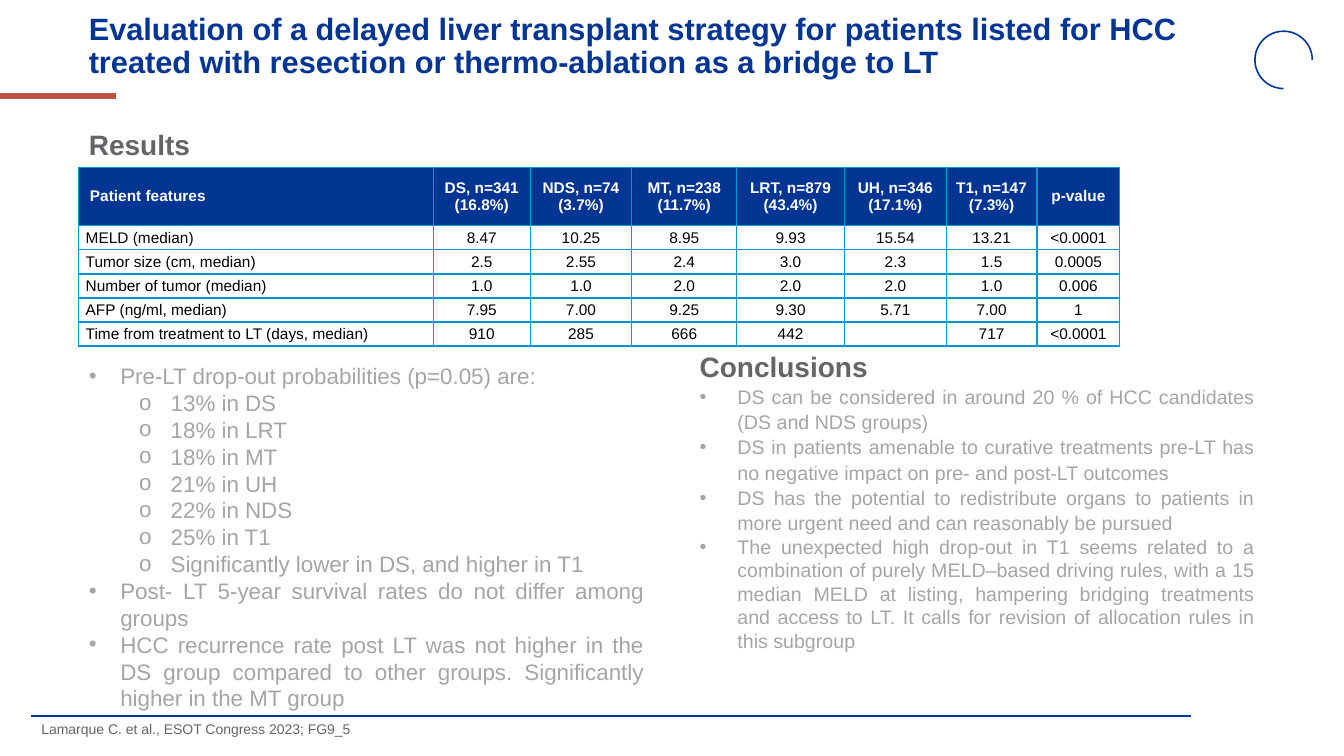
import pptx
import pptx.util
import pptx.dml.color
import pptx.enum.shapes
import pptx.enum.text
import pptx.oxml.ns
import lxml.etree

Pt = pptx.util.Pt
ALIGN = pptx.enum.text.PP_ALIGN
ANCHOR = pptx.enum.text.MSO_ANCHOR
LINE = pptx.enum.shapes.MSO_CONNECTOR.STRAIGHT
NAVY, GREY, PALE = "003594", "636569", "A5A5A5"
RED, CYAN, WHITE, BLACK = "BC5441", "0097CE", "FFFFFF", "000000"

TITLE = ("Evaluation of a delayed liver transplant strategy for patients listed for HCC "
         "treated with resection or thermo-ablation as a bridge to LT")
CITATION = "Lamarque C. et al., ESOT Congress 2023; FG9_5"
COLUMN_WIDTHS = [253.4, 69.1, 72.7, 74.9, 77, 72.7, 64.8, 59.2]
PATIENT_ROWS = [
    [" Patient features", "DS, n=341\n(16.8%)", "NDS, n=74\n(3.7%)", "MT, n=238\n(11.7%)",
     "LRT, n=879\n(43.4%)", "UH, n=346\n(17.1%)", "T1, n=147\n(7.3%)", "p-value"],
    ["MELD (median)", "8.47", "10.25", "8.95", "9.93", "15.54", "13.21", "<0.0001"],
    ["Tumor size (cm, median)", "2.5", "2.55", "2.4", "3.0", "2.3", "1.5", "0.0005"],
    ["Number of tumor (median)", "1.0", "1.0", "2.0", "2.0", "2.0", "1.0", "0.006"],
    ["AFP (ng/ml, median)", "7.95", "7.00", "9.25", "9.30", "5.71", "7.00", "1"],
    ["Time from treatment to LT (days, median)", "910", "285", "666", "442", "", "717",
     "<0.0001"],
]
RESULTS = [
    (0, "Pre-LT drop-out probabilities (p=0.05) are:"),
    (1, "13% in DS"),
    (1, "18% in LRT"),
    (1, "18% in MT"),
    (1, "21% in UH"),
    (1, "22% in NDS"),
    (1, "25% in T1"),
    (1, "Significantly lower in DS, and higher in T1"),
    (0, "Post- LT 5-year survival rates do not differ among groups"),
    (0, "HCC recurrence rate post LT was not higher in the DS group compared to other groups. "
        "Significantly higher in the MT group"),
]
CONCLUSIONS = [
    "DS can be considered in around 20 % of HCC candidates (DS and NDS groups)",
    "DS in patients amenable to curative treatments pre-LT has no negative impact on pre- "
    "and post-LT outcomes",
    "DS has the potential to redistribute organs to patients in more urgent need and can "
    "reasonably be pursued",
    "The unexpected high drop-out in T1 seems related to a combination of purely MELD–based "
    "driving rules, with a 15 median MELD at listing, hampering bridging treatments and "
    "access to LT. It calls for revision of allocation rules in this subgroup",
]


def color(value):
    return pptx.dml.color.RGBColor.from_string(value)


def add_child(parent, tag, **attributes):
    child = lxml.etree.SubElement(parent, pptx.oxml.ns.qn(tag))
    for name, value in attributes.items():
        child.set(name, value)
    return child


def place(shape, box, anchor=ANCHOR.TOP):
    shape.left, shape.top, shape.width, shape.height = [Pt(length) for length in box]
    frame = shape.text_frame
    frame.word_wrap = True
    frame.auto_size = pptx.enum.text.MSO_AUTO_SIZE.NONE
    frame.vertical_anchor = anchor
    frame.margin_left = frame.margin_right = Pt(7.2)
    frame.margin_top = frame.margin_bottom = Pt(3.6)
    return frame


def next_para(frame):
    first = frame.paragraphs[0]
    return frame.add_paragraph() if first.runs else first


def write(para, text, size, ink, bold=False, align=ALIGN.LEFT, pitch=None):
    para.alignment = align
    para.space_before = Pt(0)
    if pitch:
        para.line_spacing = Pt(pitch)
    span = para.add_run()
    span.text = text
    span.font.name = "Arial"
    span.font.size = Pt(size)
    span.font.bold = bold
    span.font.color.rgb = color(ink)


def set_bullet(para, symbol, margin, hang):
    properties = para._p.get_or_add_pPr()
    properties.set("marL", str(Pt(margin)))
    properties.set("indent", str(Pt(-hang)))
    if symbol:
        add_child(properties, "a:buFont", typeface="Arial")
        add_child(properties, "a:buChar", char=symbol)
    else:
        add_child(properties, "a:buNone")


def add_heading(frame, text):
    para = next_para(frame)
    set_bullet(para, None, 0, 0)
    write(para, text, 20, GREY, bold=True, pitch=24)


def add_rule(page, left, top, width, ink, weight):
    rule = page.shapes.add_connector(LINE, Pt(left), Pt(top), Pt(left + width), Pt(top))
    rule.line.color.rgb = color(ink)
    rule.line.width = Pt(weight)
    add_child(rule._element.spPr, "a:effectLst")


def add_decor(page):
    add_rule(page, 0, 68.4, 82.8, RED, 4.5)
    add_rule(page, 22.3, 511.2, 828.7, NAVY, 1.5)
    # Three-quarter ring, open at the lower right
    ring = page.shapes.add_shape(pptx.enum.shapes.MSO_SHAPE.ARC,
                                 Pt(896.4), Pt(22.3), Pt(41), Pt(41))
    ring.adjustments[0], ring.adjustments[1] = 54, 0
    ring.shadow.inherit = False
    ring.fill.background()
    ring.line.color.rgb = color(NAVY)
    ring.line.width = Pt(1.13)


def add_results_list(holder, box):
    frame = place(holder, box)
    for level, text in RESULTS:
        para = next_para(frame)
        para.level = level
        set_bullet(para, "•o"[level], 22.5 + 36 * level, 22.5)
        write(para, text, 16, PALE, align=ALIGN.JUSTIFY, pitch=19.2)


def add_conclusions(holder, box):
    frame = place(holder, box)
    add_heading(frame, "Conclusions")
    for text in CONCLUSIONS:
        para = next_para(frame)
        set_bullet(para, "•", 27, 27)
        pitch = 16.8 if text == CONCLUSIONS[-1] else 18
        write(para, text, 14, PALE, align=ALIGN.JUSTIFY, pitch=pitch)


def format_cell(cell, text, is_header, is_label):
    cell.vertical_anchor = ANCHOR.MIDDLE
    cell.margin_left = cell.margin_right = Pt(5)
    cell.margin_top = cell.margin_bottom = 0
    # Borders come before the fill in the cell properties
    properties = cell._tc.get_or_add_tcPr()
    for side in ("a:lnL", "a:lnR", "a:lnT", "a:lnB"):
        border = add_child(properties, side, w=str(Pt(1)))
        add_child(add_child(border, "a:solidFill"), "a:srgbClr", val=CYAN)
    if is_header:
        cell.fill.solid()
        cell.fill.fore_color.rgb = color(NAVY)
    else:
        cell.fill.background()
    if not text:
        cell.text_frame.paragraphs[0]._p.get_or_add_endParaRPr().set("sz", "1100")
        return
    for line in text.split("\n"):
        write(next_para(cell.text_frame), line, 11, WHITE if is_header else BLACK,
              bold=is_header, align=ALIGN.JUSTIFY if is_label else ALIGN.CENTER)


def add_patient_table(page, left, top):
    heights = [41.8] + [17.2] * (len(PATIENT_ROWS) - 1)
    table = page.shapes.add_table(len(heights), len(COLUMN_WIDTHS), Pt(left), Pt(top),
                                  Pt(sum(COLUMN_WIDTHS)), Pt(sum(heights))).table
    table.horz_banding = False
    for column, width in zip(table.columns, COLUMN_WIDTHS):
        column.width = Pt(width)
    for row, height, texts in zip(table.rows, heights, PATIENT_ROWS):
        row.height = Pt(height)
        for index, (cell, text) in enumerate(zip(row.cells, texts)):
            format_cell(cell, text, texts is PATIENT_ROWS[0], index == 0)


def build_results_page(deck):
    # Comparison layout: a title and four body placeholders
    page = deck.slides.add_slide(deck.slide_layouts[4])
    title, results_heading, results_list, citation, conclusions = page.placeholders
    add_decor(page)
    frame = place(title, (56.2, 7.2, 828, 52.6), ANCHOR.MIDDLE)
    write(next_para(frame), TITLE, 22, NAVY, bold=True, pitch=23.7)
    add_heading(place(results_heading, (56.2, 87.1, 411, 31.2)), "Results")
    add_results_list(results_list, (56.2, 255.1, 411, 261))
    add_conclusions(conclusions, (492.5, 246.2, 411, 225.4))
    add_patient_table(page, 56.2, 119.5)
    frame = place(citation, (22.3, 511.9, 564.5, 24.5))
    write(next_para(frame), CITATION, 10, GREY, pitch=10.8)


def main():
    deck = pptx.Presentation()
    deck.slide_width, deck.slide_height = Pt(960), Pt(540)
    build_results_page(deck)
    deck.save("out.pptx")


if __name__ == "__main__":
    main()
